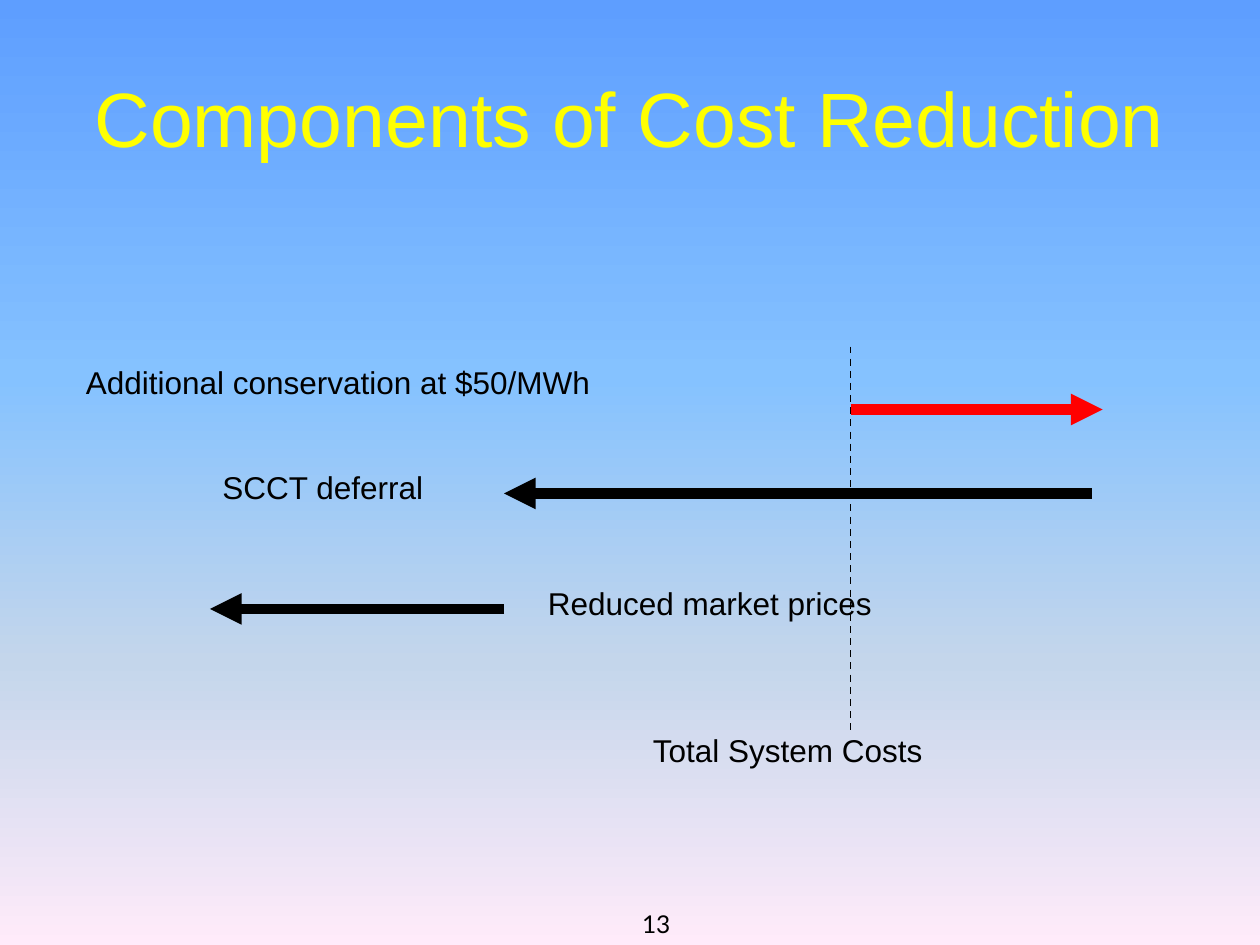
from copy import deepcopy

from pptx import Presentation
from pptx.dml.color import RGBColor
from pptx.enum.dml import MSO_LINE
from pptx.enum.shapes import MSO_CONNECTOR
from pptx.enum.text import MSO_ANCHOR, PP_ALIGN
from pptx.oxml.ns import qn
from pptx.util import Inches, Pt
from lxml.etree import SubElement

BLACK = RGBColor(0x00, 0x00, 0x00)
RED = RGBColor(0xFF, 0x00, 0x00)
YELLOW = RGBColor(0xFF, 0xFF, 0x00)
SKY = [
    (0, RGBColor(0x5E, 0x9E, 0xFF)),
    (0.4, RGBColor(0x85, 0xC2, 0xFF)),
    (0.7, RGBColor(0xC4, 0xD6, 0xEB)),
    (1, RGBColor(0xFF, 0xEB, 0xFA)),
]
COLS, ROWS = 120, 90
LABEL = {"name": "Arial", "size": Pt(18)}
TITLE = {"name": "Arial", "size": Pt(44)}
NUMBER = {"name": "Lato", "size": Pt(14)}


class Board:
    """Draws styled elements on one slide, placed by grid column and row."""

    def __init__(self, deck):
        self.wide, self.high = deck.slide_width, deck.slide_height
        self.slide = deck.slides.add_slide(deck.slide_layouts[6])

    def place(self, col, row):
        return round(self.wide * col / COLS), round(self.high * row / ROWS)

    def sky(self, stops):
        fill = self.slide.background.fill
        fill.gradient()
        fill.gradient_angle = 270
        group = self.slide.element.find(".//" + qn("a:gsLst"))
        while len(group) < len(stops):
            group.append(deepcopy(group[0]))
        for stop, (share, color) in zip(fill.gradient_stops, stops):
            stop.position = share
            stop.color.rgb = color

    def text(self, words, col, row, width, height, style=LABEL, color=BLACK,
             align=PP_ALIGN.LEFT, anchor=MSO_ANCHOR.TOP):
        box = self.slide.shapes.add_textbox(
            *self.place(col, row), *self.place(width, height))
        frame = box.text_frame
        frame.word_wrap = True
        frame.vertical_anchor = anchor
        para = frame.paragraphs[0]
        para.text = words
        para.alignment = align
        for key, value in style.items():
            setattr(para.font, key, value)
        para.font.color.rgb = color

    def line(self, start, end, color=BLACK, width=6, dash=None, arrow=True):
        link = self.slide.shapes.add_connector(
            MSO_CONNECTOR.STRAIGHT, *self.place(*start), *self.place(*end))
        link.line.color.rgb = color
        link.line.width = Pt(width)
        if dash:
            link.line.dash_style = dash
        props = link.element.spPr
        if arrow:
            SubElement(props.find(qn("a:ln")), qn("a:tailEnd"), type="triangle")
        SubElement(props, qn("a:effectLst"))


def main():
    deck = Presentation()
    deck.slide_width, deck.slide_height = Inches(10), Inches(7.5)
    board = Board(deck)
    board.sky(SKY)
    board.text("13", 43.5, 84, 38, 6, NUMBER, BLACK,
               PP_ALIGN.CENTER, MSO_ANCHOR.BOTTOM)
    board.text("Components of Cost Reduction", 6, 3.6, 108, 15, TITLE, YELLOW,
               PP_ALIGN.CENTER, MSO_ANCHOR.MIDDLE)
    for start, end, row, color in [
        (104, 48, 47, BLACK),
        (81, 105, 39, RED),
        (48, 20, 58, BLACK),
    ]:
        board.line((start, row), (end, row), color)
    board.line((81, 33), (81, 70), width=1, dash=MSO_LINE.DASH, arrow=False)
    for words, col, row, width in [
        ("Additional conservation at $50/MWh", 7, 34, 71),
        ("Total System Costs", 61, 69, 44),
        ("SCCT deferral", 20, 44, 27),
        ("Reduced market prices", 51, 55, 45),
    ]:
        board.text(words, col, row, width, 6)
    deck.save("out.pptx")


if __name__ == "__main__":
    main()
